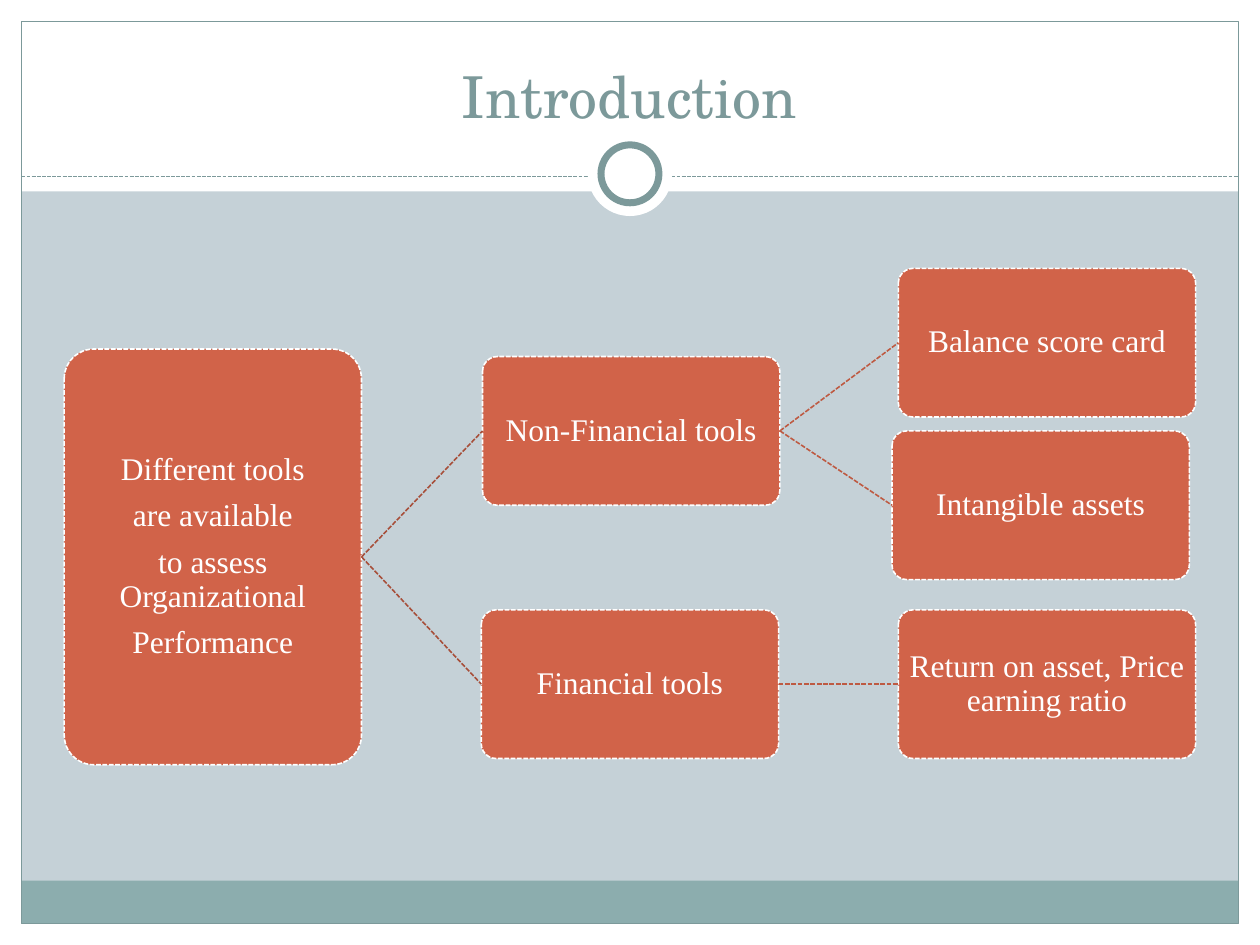
from pptx import Presentation
from pptx.dml.color import RGBColor
from pptx.enum.dml import MSO_LINE
from pptx.enum.shapes import MSO_CONNECTOR, MSO_SHAPE
from pptx.enum.text import MSO_ANCHOR, PP_ALIGN
from pptx.oxml.ns import qn
from pptx.util import Inches, Pt
from lxml import etree

WHITE = RGBColor(0xFF, 0xFF, 0xFF)
SKY = RGBColor(0xC5, 0xD1, 0xD7)
TEAL = RGBColor(0x7C, 0x99, 0x9A)
FOOTER = RGBColor(0x8C, 0xAD, 0xAE)
ORANGE = RGBColor(0xD1, 0x63, 0x49)
ROOT_LINK = RGBColor(0xA7, 0x4F, 0x3A)
LEAF_LINK = RGBColor(0xBE, 0x5A, 0x42)

TITLE_FONT = "TeX Gyre Schola"
BODY_FONT = "Times New Roman"
NODE_W, NODE_H = 2.36, 1.18


def set_line(line, color, width, dashed=False):
    """Give a line its colour, width and dash."""
    line.color.rgb = color
    line.width = Pt(width)
    if dashed:
        line.dash_style = MSO_LINE.SQUARE_DOT


def add_shape(s, box, kind=MSO_SHAPE.RECTANGLE, fill=None, line=None, width=0.75, dashed=False):
    """Add a flat preset shape in the given box."""
    sp = s.shapes.add_shape(kind, *map(Inches, box))
    sp.shadow.inherit = False
    if fill is None:
        sp.fill.background()
    else:
        sp.fill.solid()
        sp.fill.fore_color.rgb = fill
    if line is None:
        sp.line.fill.background()
    else:
        set_line(sp.line, line, width, dashed)
    return sp


def add_line(s, start, end, color, width, dashed=True):
    """Add a straight connector without a shadow."""
    c = s.shapes.add_connector(MSO_CONNECTOR.STRAIGHT, *map(Inches, (*start, *end)))
    set_line(c.line, color, width, dashed)
    etree.SubElement(c._element.spPr, qn("a:effectLst"))
    return c


def write_text(sp, text, font=BODY_FONT, size=18, color=WHITE, anchor=MSO_ANCHOR.MIDDLE,
               inset=0.01, spacing=None, after=0):
    """Write centred text, one paragraph for each line."""
    tf = sp.text_frame
    tf.word_wrap = True
    tf.vertical_anchor = anchor
    tf.margin_left = tf.margin_right = tf.margin_top = tf.margin_bottom = Inches(inset)
    for i, words in enumerate(text.split("\n")):
        p = tf.paragraphs[0] if i == 0 else tf.add_paragraph()
        p.alignment = PP_ALIGN.CENTER
        p.line_spacing = spacing
        p.space_after = Pt(after)
        r = p.add_run()
        r.text = words
        r.font.name = font
        r.font.size = Pt(size)
        r.font.color.rgb = color


def add_frame(s, x, y, w, h):
    """Draw the header band, footer band, border and ring."""
    rule_y, mid = 1.4, x + w / 2
    add_shape(s, (0, 0, 10, 1.52), fill=WHITE)
    for box in ((0, y + h, 10, y), (0, 0, x, 7.5), (x + w, 0, x, 7.5)):
        add_shape(s, box, fill=WHITE)
    add_shape(s, (x, 6.99, w, 0.34), fill=FOOTER)
    add_shape(s, (x, y, w, h), line=TEAL)
    add_line(s, (x, rule_y), (x + w, rule_y), TEAL, 0.75)
    for size, line in ((0.67, None), (0.46, TEAL)):
        box = (mid - size / 2, 1.38 - size / 2, size, size)
        add_shape(s, box, MSO_SHAPE.OVAL, WHITE, line, width=4)


def add_title(s, x, y, w, h):
    """Write the slide title."""
    sp = s.shapes.add_textbox(*map(Inches, (x, y, w, h)))
    write_text(sp, "Introduction", font=TITLE_FONT, size=33, color=TEAL,
               anchor=MSO_ANCHOR.BOTTOM, inset=0.05)


def add_node(s, text, x, y, h=NODE_H):
    """Add one rounded box of the tree."""
    sp = add_shape(s, (x, y, NODE_W, h), MSO_SHAPE.ROUNDED_RECTANGLE, ORANGE, WHITE, 0.9, True)
    sp.adjustments[0] = 0.1
    write_text(sp, text, spacing=0.9, after=7)
    return sp


def join(s, parent, child, color):
    """Join the right side of a parent to the left side of its child."""
    c = add_line(s, (0, 0), (1, 1), color, 0.9)
    c.begin_connect(parent, 3)
    c.end_connect(child, 1)


def add_tree(s, x, y):
    """Draw the tree of tools from its left and top edges."""
    root = add_node(s, "Different tools\nare available\nto assess Organizational\nPerformance",
                    x, y + 0.64, h=3.3)
    branches = (
        ("Non-Financial tools", 3.32, 0.7,
         (("Balance score card", 6.62, 0), ("Intangible assets", 6.57, 1.29))),
        ("Financial tools", 3.31, 2.71,
         (("Return on asset, Price earning ratio", 6.62, 2.71),)),
    )
    for text, dx, dy, leaves in branches:
        branch = add_node(s, text, x + dx, y + dy)
        join(s, root, branch, ROOT_LINK)
        for leaf_text, leaf_dx, leaf_dy in leaves:
            leaf = add_node(s, leaf_text, x + leaf_dx, y + leaf_dy)
            join(s, branch, leaf, LEAF_LINK)


def main():
    """Build the slide and save it."""
    prs = Presentation()
    prs.slide_width, prs.slide_height = Inches(10), Inches(7.5)
    s = prs.slides.add_slide(prs.slide_layouts[6])
    s.background.fill.solid()
    s.background.fill.fore_color.rgb = SKY
    add_frame(s, 0.17, 0.17, 9.66, 7.16)
    add_title(s, 0.33, 0.25, 9.33, 0.83)
    add_tree(s, 0.51, 2.13)
    prs.save("out.pptx")


if __name__ == "__main__":
    main()
